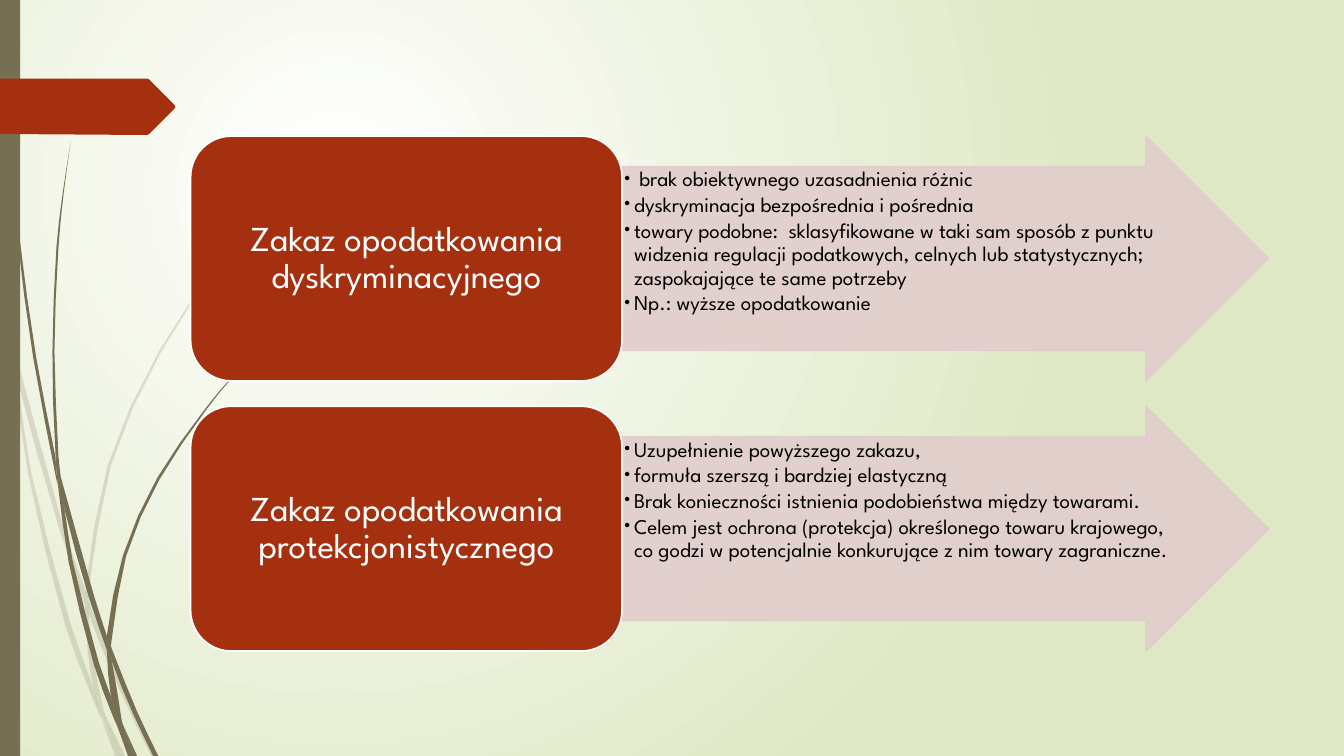
"""Build a slide on two tax prohibitions, each a titled box with an arrow of details."""
from dataclasses import dataclass
from math import dist

from lxml import etree
from pptx import Presentation
from pptx.dml.color import RGBColor
from pptx.enum import shapes, text
from pptx.oxml import ns
from pptx.util import Inches, Pt

Point = tuple[float, float]
Edge = list[Point]


@dataclass(frozen=True)
class Theme:
    font: str = "League Spartan"
    title_size: float = 25
    detail_size: float = 15
    line_width: float = 1.25
    accent: str = "A53010"
    stem: str = "766F54"
    arrow: str = "E1CDCC"
    white: str = "FFFFFF"
    black: str = "000000"
    backdrop: str = "DFE8C4"
    pale_opacity: int = 20
    arrow_opacity: int = 90


@dataclass(frozen=True)
class Blade:
    down: Edge
    up: Edge


@dataclass(frozen=True)
class Prohibition:
    title: str
    details: list[str]


THEME = Theme()
BOX_LEFT, BOX_WIDTH, ROW_HEIGHT = 1.89, 4.28, 2.43
ARROW_LEFT, ARROW_WIDTH = 6.16, 6.42
ROW_TOP, ROW_STEP = 1.35, 2.68
TITLE_INSET = 0.12
DETAIL_DROP, DETAIL_WIDTH, DETAIL_HEIGHT = 0.31, 5.5, 1.83

PALE_BLADES = [
    Blade([(0.11, 3.5), (0.09, 3.22), (0, 2.82)], [(0, 2.99), (0.1, 3.44), (0.11, 3.5)]),
    Blade([(0.14, 3.45), (0.17, 3.76), (0.58, 5.22), (0.84, 5.99)],
          [(0.85, 5.86), (0.62, 5.2), (0.14, 3.45)]),
    Blade([(0.88, 5.96), (0.88, 6.1), (1.23, 6.94), (1.5, 7.5)],
          [(1.55, 7.5), (1.27, 6.92), (0.92, 6.07), (0.88, 5.96)]),
    Blade([(1.05, 7.11), (1.19, 7.5)], [(1.24, 7.5), (1.05, 7.11)]),
    Blade([(0.11, 3.5), (0.28, 4.7), (0.65, 6.21), (0.92, 6.93), (1.01, 7.14)],
          [(0.99, 7.07), (0.93, 6.83), (0.7, 6.19), (0.31, 4.69), (0.17, 3.76), (0.11, 3.5)]),
    Blade([(0.84, 5.99), (0.87, 6.46), (0.93, 6.83), (1.05, 7.11)],
          [(1.03, 7.06), (0.91, 6.46), (0.88, 6.1), (0.84, 5.99)]),
    Blade([(3.12, 1.53), (2.68, 1.97), (2.28, 2.44), (1.58, 3.48), (1.07, 4.61),
           (0.85, 5.84), (0.88, 5.96)],
          [(0.88, 5.84), (1.1, 4.62), (1.6, 3.49), (2.29, 2.45), (2.68, 1.98), (3.12, 1.54)]),
    Blade([(1.01, 7.14), (1.14, 7.5)], [(1.19, 7.5), (1.01, 7.14)]),
    Blade([(0.85, 5.86), (0.84, 5.99), (0.88, 6.1)], [(0.88, 5.96), (0.85, 5.86)]),
    Blade([(0.93, 6.83), (0.99, 7.07), (1.19, 7.5)], [(1.05, 7.11), (0.96, 6.92), (0.93, 6.83)]),
]
DARK_BLADES = [
    Blade([(0.03, 0), (0.04, 0.48), (0.07, 1.1), (0.17, 2.33), (0.33, 3.55), (0.57, 4.81)],
          [(0.55, 4.53), (0.36, 3.55), (0.19, 2.32), (0.08, 1.09), (0.05, 0.48), (0.04, 0)]),
    Blade([(0.6, 4.72), (0.64, 5.05), (0.88, 5.92), (1.06, 6.45)],
          [(1.06, 6.31), (0.93, 5.9), (0.6, 4.72)]),
    Blade([(1.1, 6.41), (1.11, 6.56), (1.32, 7.08), (1.52, 7.5)],
          [(1.57, 7.5), (1.36, 7.06), (1.13, 6.49), (1.1, 6.41)]),
    Blade([(0.57, 4.77), (0.68, 5.57), (0.93, 6.59), (1.11, 7.08), (1.17, 7.22)],
          [(1.16, 7.17), (1.1, 6.91), (0.98, 6.57), (0.72, 5.56), (0.64, 5.05), (0.57, 4.77)]),
    Blade([(0.7, 1.41), (0.62, 1.93), (0.56, 2.45), (0.52, 3.49), (0.55, 4.49), (0.6, 4.72)],
          [(0.58, 4.53), (0.54, 3.49), (0.58, 2.45), (0.63, 1.93), (0.7, 1.41)]),
    Blade([(1.22, 7.19), (1.33, 7.5)], [(1.36, 7.5), (1.22, 7.19)]),
    Blade([(0.55, 4.49), (0.57, 4.77), (0.64, 5.05)], [(0.6, 4.72), (0.55, 4.49)]),
    Blade([(2.6, 3.44), (2.31, 3.73), (2.04, 4.05), (1.56, 4.74), (1.22, 5.51),
           (1.06, 6.31), (1.1, 6.41)],
          [(1.11, 6.33), (1.25, 5.52), (1.58, 4.76), (2.05, 4.06), (2.31, 3.74), (2.61, 3.44)]),
    Blade([(1.17, 7.22), (1.27, 7.5)], [(1.31, 7.5), (1.17, 7.22)]),
    Blade([(1.06, 6.45), (1.1, 6.91), (1.22, 7.19)], [(1.21, 7.16), (1.11, 6.56), (1.06, 6.45)]),
    Blade([(1.06, 6.31), (1.06, 6.45), (1.11, 6.56)], [(1.1, 6.41), (1.06, 6.31)]),
    Blade([(1.1, 6.91), (1.17, 7.22), (1.3, 7.5)], [(1.33, 7.5), (1.22, 7.19), (1.1, 6.91)]),
]
BADGE = [(0, 0.78), (1.46, 0.78), (1.48, 0.79), (1.73, 1.04), (1.74, 1.06),
         (1.73, 1.08), (1.48, 1.33), (1.46, 1.34), (0, 1.33)]
PROHIBITIONS = [
    Prohibition("Zakaz opodatkowania dyskryminacyjnego", [
        " brak obiektywnego uzasadnienia różnic",
        "dyskryminacja bezpośrednia i pośrednia",
        "towary podobne:  sklasyfikowane w taki sam sposób z punktu widzenia regulacji "
        "podatkowych, celnych lub statystycznych; zaspokajające te same potrzeby",
        "Np.: wyższe opodatkowanie",
    ]),
    Prohibition("Zakaz opodatkowania protekcjonistycznego", [
        "Uzupełnienie powyższego zakazu,",
        "formuła szerszą i bardziej elastyczną",
        "Brak konieczności istnienia podobieństwa między towarami.",
        "Celem jest ochrona (protekcja) określonego towaru krajowego, co godzi "
        "w potencjalnie konkurujące z nim towary zagraniczne.",
    ]),
]


def smooth(knots: Edge) -> Edge:
    """Return the knots with a curved midpoint between each pair."""
    if len(knots) == 2:
        return knots
    padded = [knots[0], *knots, knots[-1]]
    slopes = [tuple((b - a) / dist(before, after) for a, b in zip(before, after))
              for before, after in zip(padded, padded[2:])]
    points = [knots[0]]
    for start, end, leave, arrive in zip(knots, knots[1:], slopes, slopes[1:]):
        bulge = dist(start, end) / 8
        middle = tuple((p + q) / 2 + bulge * (u - v)
                       for p, q, u, v in zip(start, end, leave, arrive))
        points += [middle, end]
    return points


def paint(shape, fill: str, line: str | None = None, opacity: int = 100) -> None:
    """Set fill, outline and opacity of a shape and drop its shadow."""
    shape.shadow.inherit = False
    shape.fill.solid()
    shape.fill.fore_color.rgb = RGBColor.from_string(fill)
    if line:
        shape.line.color.rgb = RGBColor.from_string(line)
        shape.line.width = Pt(THEME.line_width)
    else:
        shape.line.fill.background()
    if opacity < 100:
        for color in shape.element.spPr.iter(ns.qn("a:srgbClr")):
            etree.SubElement(color, ns.qn("a:alpha"), val=str(opacity * 1000))


def draw_outline(slide, points: Edge, fill: str, opacity: int = 100) -> None:
    """Draw a closed filled outline."""
    corners = [(Inches(x), Inches(y)) for x, y in points]
    builder = slide.shapes.build_freeform(*corners[0])
    builder.add_line_segments(corners[1:], close=True)
    paint(builder.convert_to_shape(), fill, opacity=opacity)


def add_panel(slide, kind, left: float, top: float, width: float, height: float):
    """Add a preset shape measured in inches."""
    return slide.shapes.add_shape(kind, *map(Inches, (left, top, width, height)))


def add_text(slide, left: float, top: float, width: float, height: float, content: str):
    """Add a wrapping text box and return its frame."""
    frame = slide.shapes.add_textbox(*map(Inches, (left, top, width, height))).text_frame
    frame.text = content
    frame.word_wrap = True
    return frame


def format_paragraph(paragraph, size: float, color: str, spacing: float) -> None:
    """Set line spacing and the font of every run."""
    paragraph.line_spacing = spacing
    for run in paragraph.runs:
        run.font.name = THEME.font
        run.font.size = Pt(size)
        run.font.color.rgb = RGBColor.from_string(color)


def add_bullet(paragraph) -> None:
    """Give a paragraph a hanging bullet."""
    properties = paragraph._p.get_or_add_pPr()
    properties.set("marL", str(Inches(0.12)))
    properties.set("indent", str(-Inches(0.12)))
    etree.SubElement(properties, ns.qn("a:buFont"), typeface=THEME.font)
    etree.SubElement(properties, ns.qn("a:buChar"), char="•")


def draw_prohibition(slide, prohibition: Prohibition, top: float) -> None:
    """Draw one arrow of details with its title box."""
    arrow = add_panel(slide, shapes.MSO_SHAPE.RIGHT_ARROW, ARROW_LEFT, top, ARROW_WIDTH, ROW_HEIGHT)
    arrow.adjustments[0] = 0.75
    paint(arrow, THEME.arrow, THEME.arrow, THEME.arrow_opacity)
    details = add_text(slide, ARROW_LEFT, top + DETAIL_DROP, DETAIL_WIDTH, DETAIL_HEIGHT,
                       "\n".join(prohibition.details))
    details.margin_left = details.margin_right = Inches(0.01)
    details.margin_top = details.margin_bottom = Inches(0.01)
    for paragraph in details.paragraphs:
        paragraph.space_after = Pt(1.6)
        format_paragraph(paragraph, THEME.detail_size, THEME.black, 0.93)
        add_bullet(paragraph)

    box = add_panel(slide, shapes.MSO_SHAPE.ROUNDED_RECTANGLE, BOX_LEFT, top, BOX_WIDTH, ROW_HEIGHT)
    paint(box, THEME.accent, THEME.white)
    frame = add_text(slide, BOX_LEFT + TITLE_INSET, top + TITLE_INSET,
                     BOX_WIDTH - 2 * TITLE_INSET, ROW_HEIGHT - 2 * TITLE_INSET, prohibition.title)
    frame.vertical_anchor = text.MSO_ANCHOR.MIDDLE
    title = frame.paragraphs[0]
    title.alignment = text.PP_ALIGN.CENTER
    format_paragraph(title, THEME.title_size, THEME.white, 0.9)


def fill_background(slide) -> None:
    """Fill the background with a radial gradient."""
    fill = slide.background.fill
    fill.gradient()
    for stop, color in zip(fill.gradient_stops, (THEME.white, THEME.backdrop)):
        stop.color.rgb = RGBColor.from_string(color)
    gradient = next(slide.element.iter(ns.qn("a:gradFill")))
    circle = etree.Element(ns.qn("a:path"), path="circle")
    etree.SubElement(circle, ns.qn("a:fillToRect"), l="50000", t="50000", r="100000", b="100000")
    gradient.replace(gradient.find(ns.qn("a:lin")), circle)


def main() -> None:
    """Build and save the presentation."""
    presentation = Presentation()
    presentation.slide_width, presentation.slide_height = Inches(13.33), Inches(7.5)
    slide = presentation.slides.add_slide(presentation.slide_layouts[6])
    fill_background(slide)
    for blades, opacity in ((PALE_BLADES, THEME.pale_opacity), (DARK_BLADES, 100)):
        for blade in blades:
            draw_outline(slide, smooth(blade.down) + smooth(blade.up), THEME.stem, opacity)
    paint(add_panel(slide, shapes.MSO_SHAPE.RECTANGLE, 0, 0, 0.2, 7.5), THEME.stem)
    draw_outline(slide, BADGE, THEME.accent)
    for row, prohibition in enumerate(PROHIBITIONS):
        draw_prohibition(slide, prohibition, ROW_TOP + row * ROW_STEP)
    presentation.save("out.pptx")


if __name__ == "__main__":
    main()
